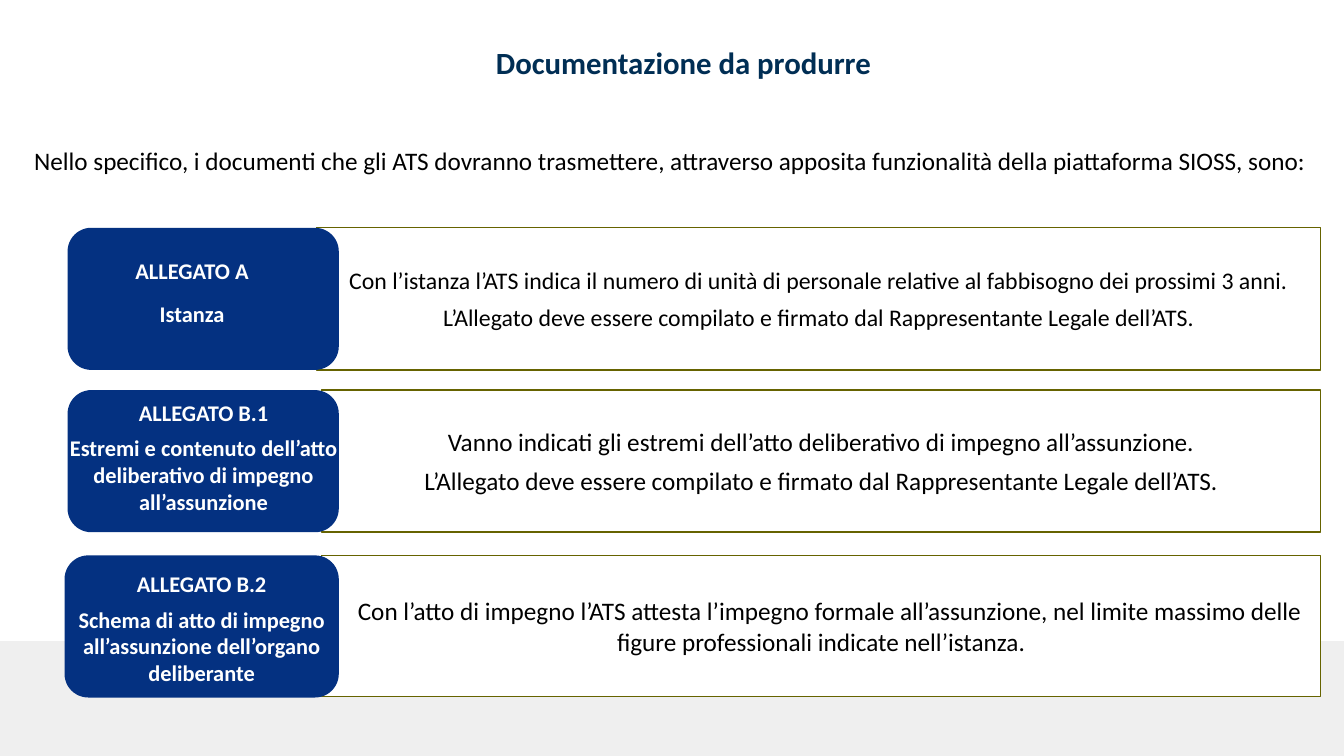
import pptx
import pptx.util
import pptx.dml.color
import pptx.enum.shapes
import pptx.enum.text

PX = 9144  # EMU per px, 100 px to the inch
FONT = "Calibri"
NAVY, BLUE, OLIVE = "002E54", "043181", "666300"
BLACK, WHITE, GREY = "000000", "FFFFFF", "EFEFEF"
SHAPE = pptx.enum.shapes.MSO_SHAPE
CENTER = pptx.enum.text.PP_ALIGN.CENTER
SIGN = "L’Allegato deve essere compilato e firmato dal Rappresentante Legale dell’ATS."

# Label box, label text box, label lines, gap, body box, body lines, size, indent
ROWS = [
    ((64, 551, 272, 141), (64, 561, 272, 126),
     ["ALLEGATO B.2", "Schema di atto di impegno all’assunzione dell’organo deliberante"], 6,
     (319, 551, 991, 140),
     ["Con l’atto di impegno l’ATS attesta l’impegno formale all’assunzione, "
      "nel limite massimo delle figure professionali indicate nell’istanza."], 18, 17),
    ((67, 387, 269, 141), (49, 391, 306, 126),
     ["ALLEGATO B.1", "Estremi e contenuto dell’atto deliberativo di impegno all’assunzione"], 6,
     (319, 387, 991, 141),
     ["Vanno indicati gli estremi dell’atto deliberativo di impegno all’assunzione.", SIGN], 18, 0),
    ((67, 226, 269, 141), (106, 250, 169, 90),
     ["ALLEGATO A", "Istanza"], 12,
     (314, 226, 996, 141),
     ["Con l’istanza l’ATS indica il numero di unità di personale relative "
      "al fabbisogno dei prossimi 3 anni.", SIGN], 17, 0),
]


def paint(code):
    return pptx.dml.color.RGBColor.from_string(code)


def scale(box):
    return [pptx.util.Emu(n * PX) for n in box]


def write(frame, lines, size, color, bold=False, align=None, gap=0, last=0, indent=0):
    """Fill a text frame; gap follows every line but the final one, last follows that."""
    for i, line in enumerate(lines):
        para = frame.paragraphs[0] if i == 0 else frame.add_paragraph()
        para.alignment = align
        para.space_after = pptx.util.Pt(gap if i < len(lines) - 1 else last)
        if indent:
            para._p.get_or_add_pPr().set("indent", str(indent * PX))
        run = para.add_run()
        run.text = line
        run.font.name = FONT
        run.font.size = pptx.util.Pt(size)
        run.font.bold = bold
        run.font.color.rgb = paint(color)


def block(slide, kind, box, fill, edge=None):
    shape = slide.shapes.add_shape(kind, *scale(box))
    shape.shadow.inherit = False
    shape.fill.solid()
    shape.fill.fore_color.rgb = paint(fill)
    if edge:
        shape.line.color.rgb = paint(edge)
        shape.line.width = pptx.util.Pt(1)
    else:
        shape.line.fill.background()
    return shape


def label(slide, box, lines, size, color, wrap=True, **style):
    frame = slide.shapes.add_textbox(*scale(box)).text_frame
    frame.word_wrap = wrap
    frame.auto_size = pptx.enum.text.MSO_AUTO_SIZE.SHAPE_TO_FIT_TEXT
    write(frame, lines, size, color, **style)


def header(slide):
    label(slide, (482, 38, 659, 47), ["Documentazione da produrre"], 22, NAVY, bold=True)
    label(slide, (24, 139, 1285, 40),
          ["Nello specifico, i documenti che gli ATS dovranno trasmettere, attraverso "
           "apposita funzionalità della piattaforma SIOSS, sono:"], 18, BLACK, wrap=False)


def body(slide, box, lines, size, indent):
    frame = block(slide, SHAPE.RECTANGLE, box, WHITE, OLIVE).text_frame
    frame.word_wrap = True
    frame.vertical_anchor = pptx.enum.text.MSO_ANCHOR.MIDDLE
    write(frame, lines, size, BLACK, align=CENTER, gap=6, last=6, indent=indent)


def tab(slide, box, area, lines, gap):
    block(slide, SHAPE.ROUNDED_RECTANGLE, box, BLUE)
    label(slide, area, lines, 16, WHITE, bold=True, align=CENTER, gap=gap)


def main():
    deck = pptx.Presentation()
    deck.slide_width, deck.slide_height = scale((1333, 750))
    slide = deck.slides.add_slide(deck.slide_layouts[6])

    # Footer band, then title and lead
    block(slide, SHAPE.RECTANGLE, (0, 636, 1333, 114), GREY)
    header(slide)

    # One row per attachment
    for box, area, names, gap, frame, lines, size, indent in ROWS:
        body(slide, frame, lines, size, indent)
        tab(slide, box, area, names, gap)

    deck.save("out.pptx")


if __name__ == "__main__":
    main()
